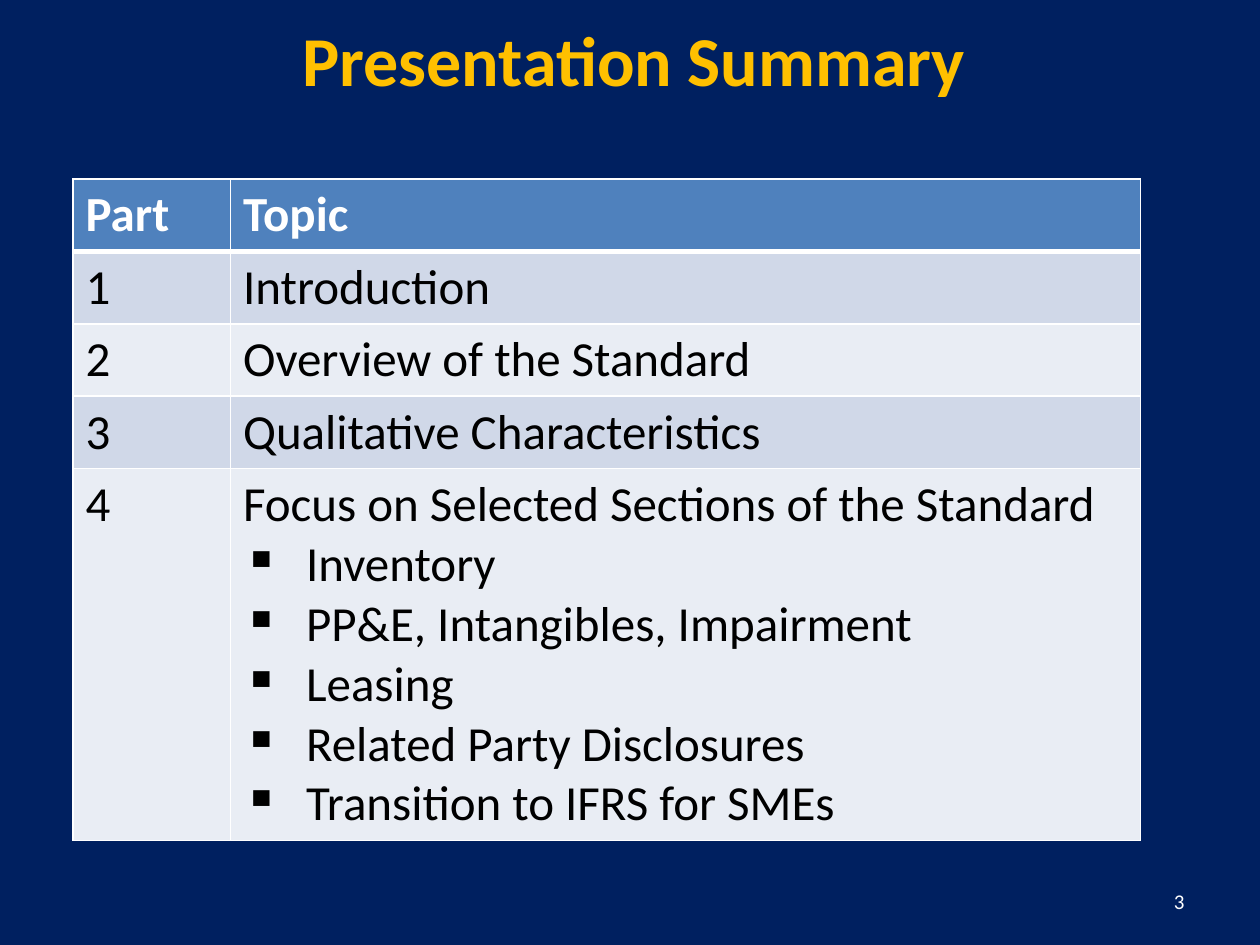
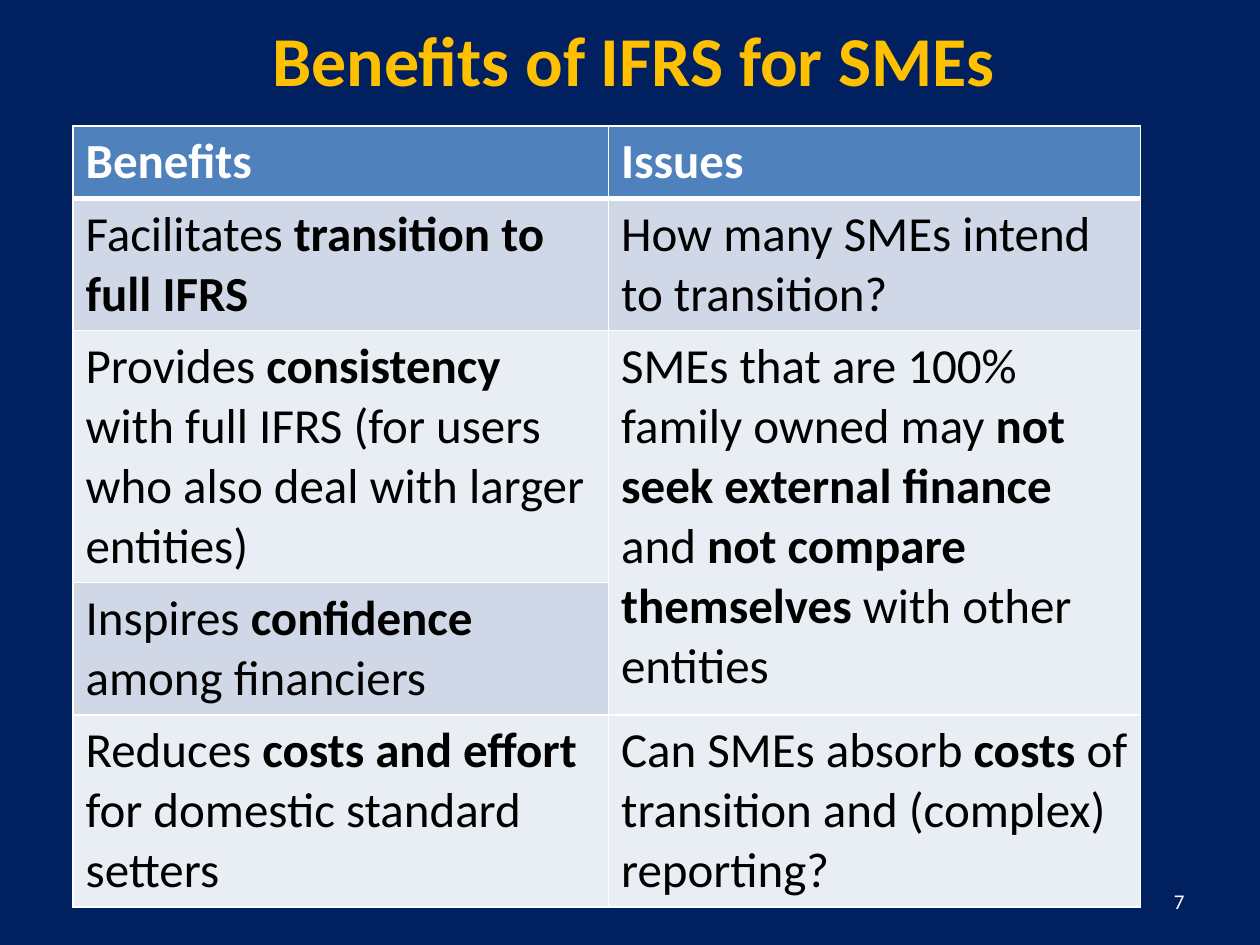
from dataclasses import dataclass

from lxml.etree import SubElement
from pptx import Presentation
from pptx.dml.color import RGBColor
from pptx.enum.text import MSO_ANCHOR, PP_ALIGN
from pptx.oxml import parse_xml
from pptx.oxml.ns import nsdecls, qn
from pptx.util import Pt

# Content: "**" switches bold on and off, "▪ " starts a bullet
PAGES = [
    {
        "title": "Presentation Summary",
        "number": "3",
        "top": 102.24,
        "columns": (90, 519.84),
        "line_counts": (1, 1, 1, 1, 6),
        "rows": [
            ("Part", "Topic"),
            ("1", "Introduction"),
            ("2", "Overview of the Standard"),
            ("3", "Qualitative Characteristics"),
            ("4", "Focus on Selected Sections of the Standard\n"
                  "▪ Inventory\n"
                  "▪ PP&E, Intangibles, Impairment\n"
                  "▪ Leasing\n"
                  "▪ Related Party Disclosures\n"
                  "▪ Transition to IFRS for SMEs"),
        ],
    },
    {
        "title": "Benefits of IFRS for SMEs",
        "number": "7",
        "top": 72,
        "columns": (306, 303.84),
        "line_counts": (1, 2, 4, 2, 3),
        "rows": [
            ("Benefits", "Issues"),
            ("Facilitates **transition to full IFRS**",
             "How many SMEs intend to transition?"),
            ("Provides **consistency **with full IFRS (for users who also "
             "deal with larger entities)",
             "SMEs that are 100% family owned may **not seek external finance "
             "**and **not compare themselves **with other entities"),
            ("Inspires **confidence **among financiers", None),  # None joins the cell above
            ("Reduces **costs and effort **for domestic standard setters",
             "Can SMEs absorb **costs** of transition and (complex) reporting?"),
        ],
    },
]


@dataclass(frozen=True)
class Theme:
    font: str = "Calibri"
    background: str = "002060"
    title: str = "FFC000"
    light: str = "FFFFFF"
    dark: str = "000000"
    header: str = "4F81BD"
    bands: tuple = ("E9EDF4", "D0D8E8")
    title_size: float = 40
    table_size: float = 28
    number_size: float = 12


THEME = Theme()
TITLE_BOX = (38.16, 0, 648, 66.96)
NUMBER_BOX = (516.24, 500.4, 167.76, 28.8)
TABLE_LEFT = 41.76
LINE_HEIGHT, CELL_PADDING = 34.2, 7.2
BULLET, BULLET_INDENT = "▪ ", Pt(36)
THIN, THICK = Pt(1), Pt(3)


def set_font(para, size, color, bold=False):
    para.font.name = THEME.font
    para.font.size = Pt(size)
    para.font.bold = bold
    para.font.color.rgb = RGBColor.from_string(color)


def add_label(page, text, place, size, color, align, bold=False):
    box = page.shapes.add_textbox(*map(Pt, place))
    box.text_frame.word_wrap = True
    box.text_frame.vertical_anchor = MSO_ANCHOR.MIDDLE
    para = box.text_frame.paragraphs[0]
    para.text = text
    para.alignment = align
    set_font(para, size, color, bold)


def add_bullet(para):
    props = para._p.get_or_add_pPr()
    props.set("marL", str(BULLET_INDENT))
    props.set("indent", str(-BULLET_INDENT))
    mark = parse_xml(f'<a:buChar {nsdecls("a")} char="{BULLET.strip()}"/>')
    props.find(qn("a:defRPr")).addprevious(mark)


def fill_text(cell, text, color, header):
    frame = cell.text_frame
    for index, line in enumerate(text.split("\n")):
        para = frame.add_paragraph() if index else frame.paragraphs[0]
        set_font(para, THEME.table_size, color, header)
        if line.startswith(BULLET):
            add_bullet(para)
            line = line.removeprefix(BULLET)
        for part, words in enumerate(line.split("**")):
            if words:
                span = para.add_run()
                span.text = words
                if part % 2:
                    span.font.bold = True


def set_borders(cell, row):
    props = cell._tc.get_or_add_tcPr()
    widths = {"L": THIN, "R": THIN,
              "T": THICK if row == 1 else THIN,
              "B": THICK if row == 0 else THIN}
    for place, (side, width) in enumerate(widths.items()):
        line = parse_xml(f'<a:ln{side} {nsdecls("a")} w="{width}"/>')
        paint = SubElement(line, qn("a:solidFill"))
        SubElement(paint, qn("a:srgbClr"), val=THEME.light)
        props.insert(place, line)


def add_table(page, content):
    rows, columns = content["rows"], content["columns"]
    heights = [CELL_PADDING + LINE_HEIGHT * count for count in content["line_counts"]]
    table = page.shapes.add_table(
        len(rows), len(columns), Pt(TABLE_LEFT), Pt(content["top"]),
        Pt(sum(columns)), Pt(sum(heights))).table
    for column, width in zip(table.columns, columns):
        column.width = Pt(width)
    for row, (texts, height) in enumerate(zip(rows, heights)):
        table.rows[row].height = Pt(height)
        header = row == 0
        for column, text in enumerate(texts):
            cell = table.cell(row, column)
            cell.fill.solid()
            cell.fill.fore_color.rgb = RGBColor.from_string(
                THEME.header if header else THEME.bands[row % 2])
            set_borders(cell, row)
            if text is None:
                table.cell(row - 1, column).merge(cell)
            else:
                fill_text(cell, text, THEME.light if header else THEME.dark, header)


def main():
    deck = Presentation()
    deck.slide_width, deck.slide_height = Pt(720), Pt(540)

    # Shared background
    backdrop = deck.slide_master.background.fill
    backdrop.solid()
    backdrop.fore_color.rgb = RGBColor.from_string(THEME.background)

    # Title, slide number and table of each page
    for content in PAGES:
        page = deck.slides.add_slide(deck.slide_layouts[6])
        add_label(page, content["title"], TITLE_BOX, THEME.title_size,
                  THEME.title, PP_ALIGN.CENTER, bold=True)
        add_label(page, content["number"], NUMBER_BOX, THEME.number_size,
                  THEME.light, PP_ALIGN.RIGHT)
        add_table(page, content)
    deck.save("out.pptx")


if __name__ == "__main__":
    main()
